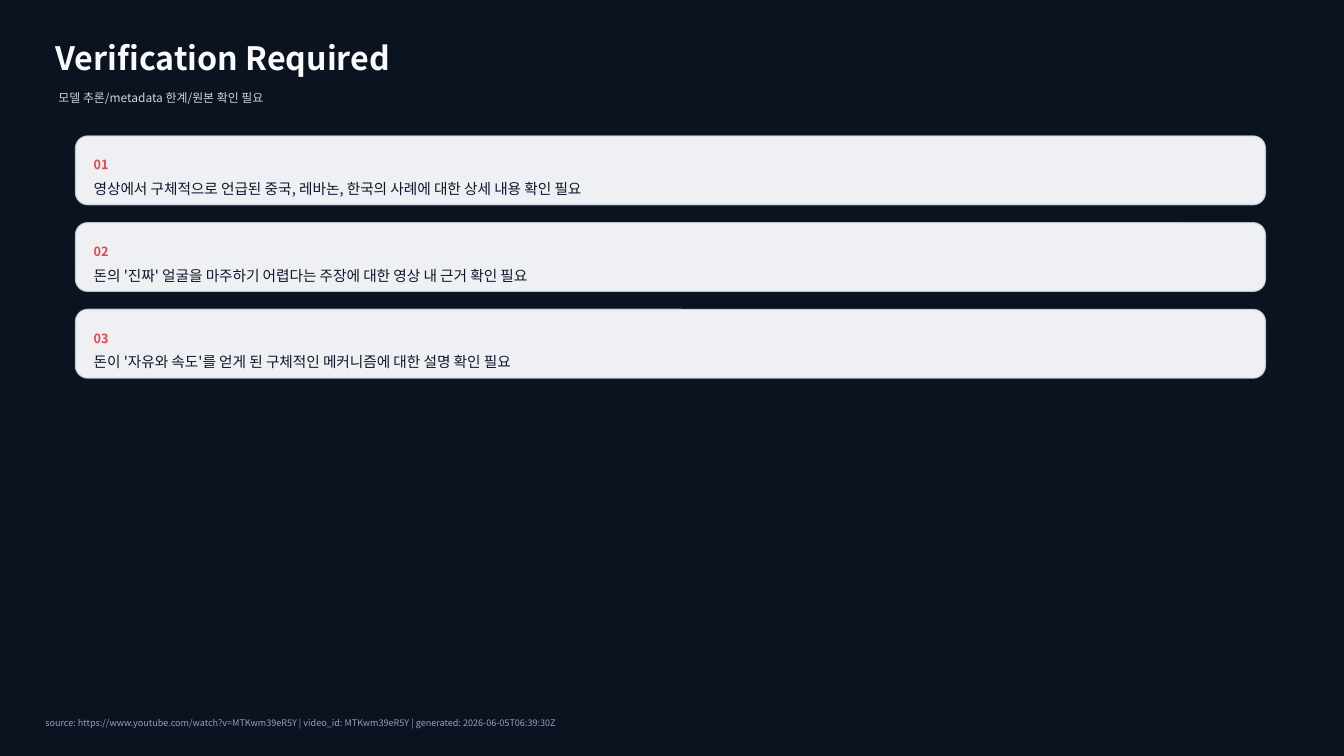
from dataclasses import dataclass

from lxml.etree import SubElement
from pptx import Presentation
from pptx.dml.color import RGBColor
from pptx.dml.fill import FillFormat
from pptx.enum.shapes import MSO_SHAPE as Preset
from pptx.enum.text import MSO_ANCHOR as Anchor, MSO_AUTO_SIZE as AutoSize, PP_ALIGN as Align
from pptx.oxml.ns import qn
from pptx.shapes.autoshape import Shape
from pptx.slide import Slide
from pptx.util import Inches, Pt

FONT = "Noto Sans CJK KR"
COLORS = {
    "background": "0B1220",
    "title": "F8FAFC",
    "subtitle": "CBD5E1",
    "card": "F8FAFC",
    "border": "D7E0EA",
    "number": "EF4444",
    "body": "0F172A",
    "source": "94A3B8",
}
FRAME_FORMAT = {
    "margin_left": 0,
    "margin_top": 0,
    "margin_right": 0,
    "margin_bottom": 0,
    "word_wrap": True,
    "auto_size": AutoSize.NONE,
    "vertical_anchor": Anchor.MIDDLE,
}
CARD_TOP, CARD_STEP = 1.35, 0.86
CHECKS = [
    "영상에서 구체적으로 언급된 중국, 레바논, 한국의 사례에 대한 상세 내용 확인 필요",
    "돈의 '진짜' 얼굴을 마주하기 어렵다는 주장에 대한 영상 내 근거 확인 필요",
    "돈이 '자유와 속도'를 얻게 된 구체적인 메커니즘에 대한 설명 확인 필요",
]


@dataclass(frozen=True)
class Label:
    text: str
    left: float
    top: float
    width: float
    height: float
    size: float
    color: str
    bold: bool = False


@dataclass(frozen=True)
class Card:
    number: int
    text: str

    @property
    def top(self) -> float:
        return CARD_TOP + CARD_STEP * (self.number - 1)


TITLE = Label("Verification Required", 0.55, 0.35, 12, 0.45, 23, "title", True)
SUBTITLE = Label("모델 추론/metadata 한계/원본 확인 필요", 0.58, 0.83, 11.5, 0.28, 8.5, "subtitle")
SOURCE = Label(
    "source: https://www.youtube.com/watch?v=MTKwm39eR5Y | video_id: MTKwm39eR5Y"
    " | generated: 2026-06-05T06:39:30Z",
    0.45, 7.05, 12.4, 0.25, 6.5, "source",
)


def color_of(name: str) -> RGBColor:
    return RGBColor.from_string(COLORS[name])


def paint(fill: FillFormat, name: str) -> None:
    fill.solid()
    fill.fore_color.rgb = color_of(name)


def set_opacity(box: Shape, tag: str, percent: int) -> None:
    for color in box.element.spPr.findall(f"{tag}/{qn('a:srgbClr')}"):
        SubElement(color, qn("a:alpha")).set("val", str(percent * 1000))


def write_label(box: Shape, label: Label) -> None:
    for name in ("left", "top", "width", "height"):
        setattr(box, name, Inches(getattr(label, name)))
    frame = box.text_frame
    for name, value in FRAME_FORMAT.items():
        setattr(frame, name, value)
    para = frame.paragraphs[0]
    para.alignment = Align.LEFT
    span = para.add_run()
    span.text = label.text
    font_format = {"name": FONT, "size": Pt(label.size), "bold": label.bold}
    for name, value in font_format.items():
        setattr(span.font, name, value)
    span.font.color.rgb = color_of(label.color)
    SubElement(span.font._element, qn("a:ea")).set("typeface", FONT)


def add_label(page: Slide, label: Label) -> None:
    write_label(page.shapes.add_textbox(0, 0, 0, 0), label)


def add_card(page: Slide, card: Card) -> None:
    box = page.shapes.add_shape(
        Preset.ROUNDED_RECTANGLE, Inches(0.75), Inches(card.top), Inches(11.8), Inches(0.68)
    )
    box.adjustments[0] = 0.176
    box.shadow.inherit = False
    paint(box.fill, "card")
    paint(box.line.fill, "border")
    box.line.width = Pt(1)
    set_opacity(box, qn("a:solidFill"), 96)
    set_opacity(box, f"{qn('a:ln')}/{qn('a:solidFill')}", 80)
    add_label(page, Label(f"{card.number:02}", 0.93, card.top + 0.16, 11.44, 0.25, 9, "number", True))
    add_label(page, Label(card.text, 0.93, card.top + 0.5, 11.44, 0.04, 10.5, "body"))


def main() -> None:
    deck = Presentation()
    deck.slide_width, deck.slide_height = Inches(13.33), Inches(7.5)
    page = deck.slides.add_slide(deck.slide_layouts.get_by_name("Title Only"))
    paint(page.background.fill, "background")
    write_label(page.shapes.title, TITLE)
    add_label(page, SUBTITLE)
    for number, text in enumerate(CHECKS, start=1):
        add_card(page, Card(number, text))
    add_label(page, SOURCE)
    deck.save("out.pptx")


if __name__ == "__main__":
    main()
